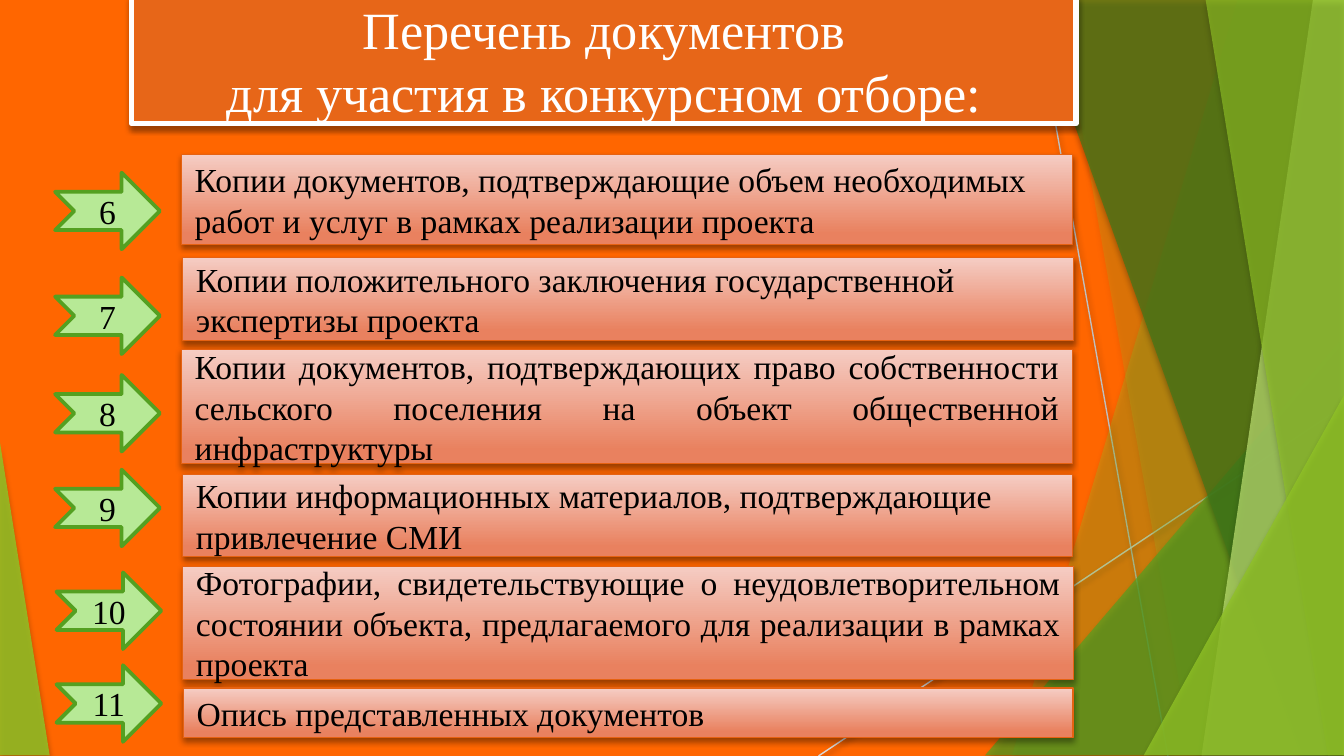
from lxml.etree import SubElement
from pptx import Presentation
from pptx.dml.color import RGBColor
from pptx.enum.shapes import MSO_CONNECTOR, MSO_SHAPE
from pptx.enum.text import MSO_ANCHOR, PP_ALIGN
from pptx.oxml.ns import qn
from pptx.util import Pt

PX = 4572
WIDTH, HEIGHT = 2000, 1125
FONT = "Times New Roman"
COLORS = {
    "background": "FF6600", "title": "E76618", "white": "FFFFFF", "text": "000000",
    "shadow": "000000", "bar_dark": "E9815F", "bar_light": "F5CDC4", "bar_line": "E66212",
    "arrow": "B7E996", "green": "54A021", "lime": "90C226", "forest": "3F7819",
    "pale": "C0E474", "gray": "BFBFBF", "light_gray": "D9D9D9",
}
SOFT_SHADOW = (38, 3.1, 1.6)
FACET_SHADOW = (35, 3, 2)
DOCUMENTS = [
    (6, "Копии документов, подтверждающие объем необходимых работ и услуг в рамках реализации проекта",
     (270, 230, 1326, 134), (82, 257), PP_ALIGN.LEFT),
    (7, "Копии положительного заключения государственной экспертизы проекта",
     (272, 383, 1326, 124), (82, 413), PP_ALIGN.LEFT),
    (8, "Копии документов, подтверждающих право собственности сельского поселения на объект общественной инфраструктуры",
     (270, 520, 1326, 170), (82, 558), PP_ALIGN.JUSTIFY),
    (9, "Копии информационных материалов, подтверждающие привлечение СМИ",
     (272, 706, 1324, 122), (82, 699), PP_ALIGN.LEFT),
    (10, "Фотографии, свидетельствующие о неудовлетворительном состоянии объекта, предлагаемого для реализации в рамках проекта",
     (272, 843, 1326, 168), (84, 852), PP_ALIGN.JUSTIFY),
    (11, "Опись представленных документов",
     (273, 1024, 1324, 74), (84, 990), PP_ALIGN.LEFT),
]


def rgb(name):
    """Return the named colour."""
    return RGBColor.from_string(COLORS[name])


def add_alpha(color, percent):
    """Set the opacity of a colour element."""
    SubElement(color, qn("a:alpha")).set("val", str(percent * 1000))


def cast_shadow(part, opacity, blur, distance):
    """Give a shape or connector a shadow that falls straight down."""
    effects = SubElement(part.element.spPr, qn("a:effectLst"))
    outer = SubElement(effects, qn("a:outerShdw"), blurRad=str(int(Pt(blur))),
                       dist=str(int(Pt(distance))), dir="5400000", algn="ctr", rotWithShape="0")
    color = SubElement(outer, qn("a:srgbClr"), val=COLORS["shadow"])
    add_alpha(color, opacity)


def add_block(slide, preset, box, line, width):
    """Add an outlined preset shape at a box in px."""
    block = slide.shapes.add_shape(preset, *(PX * length for length in box))
    block.line.color.rgb = rgb(line)
    block.line.width = Pt(width)
    return block


def write(block, text, size, color, align):
    """Write one paragraph in the middle of a block."""
    frame = block.text_frame
    frame.word_wrap = True
    frame.vertical_anchor = MSO_ANCHOR.MIDDLE
    frame.text = text
    paragraph = frame.paragraphs[0]
    paragraph.alignment = align
    for run in paragraph.runs:
        run.font.name = FONT
        run.font.size = Pt(size)
        run.font.color.rgb = rgb(color)


def add_ray(slide, start, end, color):
    """Add a thin background line."""
    ray = slide.shapes.add_connector(
        MSO_CONNECTOR.STRAIGHT, *(PX * length for length in start + end))
    ray.line.color.rgb = rgb(color)
    ray.line.width = Pt(0.75)
    cast_shadow(ray, *SOFT_SHADOW)


def add_facet(slide, points, color, opacity):
    """Add a translucent polygon of the background."""
    builder = slide.shapes.build_freeform(*points[0], scale=PX)
    builder.add_line_segments(points[1:], close=True)
    finish_facet(builder.convert_to_shape(), color, opacity)


def add_wedge(slide, box, apex, color, opacity):
    """Add a translucent right triangle of the background."""
    wedge = slide.shapes.add_shape(MSO_SHAPE.ISOSCELES_TRIANGLE, *(PX * length for length in box))
    wedge.adjustments[0] = apex
    finish_facet(wedge, color, opacity)


def finish_facet(facet, color, opacity):
    """Colour a background facet and give it a shadow."""
    facet.fill.solid()
    facet.fill.fore_color.rgb = rgb(color)
    facet.line.fill.background()
    add_alpha(facet.element.spPr.find(".//" + qn("a:srgbClr")), opacity)
    cast_shadow(facet, *FACET_SHADOW)


def add_backdrop(slide, box):
    """Draw the rays and green facets inside a box."""
    left, top, width, height = box
    right, bottom = left + width, top + height

    def band(top_x, bottom_x, color, opacity):
        """Fill from a slanted edge to the right side."""
        points = [(left + top_x, top - 1), (right, top - 1),
                  (right, bottom - 1), (left + bottom_x, bottom - 1)]
        add_facet(slide, points, color, opacity)

    def corner(x, wide, high, apex, color, opacity):
        """Stand a wedge on the bottom edge."""
        add_wedge(slide, (left + x, bottom - high - 1, wide, high), apex, color, opacity)

    add_ray(slide, (left + 1538, top), (left + 1738, bottom), "gray")
    add_ray(slide, (right, top + 604), (left + 1218, bottom), "light_gray")
    band(1842, 1506, "lime", 30)
    band(1576, 1774, "lime", 20)
    corner(1466, 534, 624, 1, "green", 72)
    band(1532, 1936, "forest", 70)
    band(1954, 1788, "pale", 70)
    band(1794, 1976, "lime", 65)
    corner(1702, 298, 536, 1, "lime", 80)
    corner(0, 74, 466, 0, "lime", 85)


def add_title(slide, box):
    """Add the framed heading."""
    title = add_block(slide, MSO_SHAPE.RECTANGLE, box, "white", 3)
    title.fill.solid()
    title.fill.fore_color.rgb = rgb("title")
    cast_shadow(title, *SOFT_SHADOW)
    write(title, "Перечень документов\vдля участия в конкурсном отборе:", 28, "white", PP_ALIGN.CENTER)


def add_document(slide, box, arrow_at, number, text, align):
    """Add one document bar and its numbered arrow."""
    bar = add_block(slide, MSO_SHAPE.RECTANGLE, box, "bar_line", 0.75)
    bar.fill.gradient()
    bar.fill.gradient_angle = 90
    shades = [("bar_dark", 0.12), ("bar_light", 1)]
    for stop, (color, position) in zip(bar.fill.gradient_stops, shades):
        stop.color.rgb = rgb(color)
        stop.position = position
    cast_shadow(bar, *SOFT_SHADOW)
    write(bar, text, 18, "text", align)

    arrow = add_block(slide, MSO_SHAPE.NOTCHED_RIGHT_ARROW, arrow_at + (156, 114), "green", 2)
    arrow.fill.solid()
    arrow.fill.fore_color.rgb = rgb("arrow")
    arrow.shadow.inherit = False
    write(arrow, str(number), 18, "text", PP_ALIGN.CENTER)


def main():
    """Build and save the slide."""
    deck = Presentation()
    deck.slide_width, deck.slide_height = WIDTH * PX, HEIGHT * PX
    slide = deck.slides.add_slide(deck.slide_layouts[6])
    slide.background.fill.solid()
    slide.background.fill.fore_color.rgb = rgb("background")
    add_backdrop(slide, (0, 0, WIDTH, HEIGHT))
    add_title(slide, (196, -4, 1405, 188))
    for number, text, box, arrow_at, align in DOCUMENTS:
        add_document(slide, box, arrow_at, number, text, align)
    deck.save("out.pptx")


if __name__ == "__main__":
    main()
